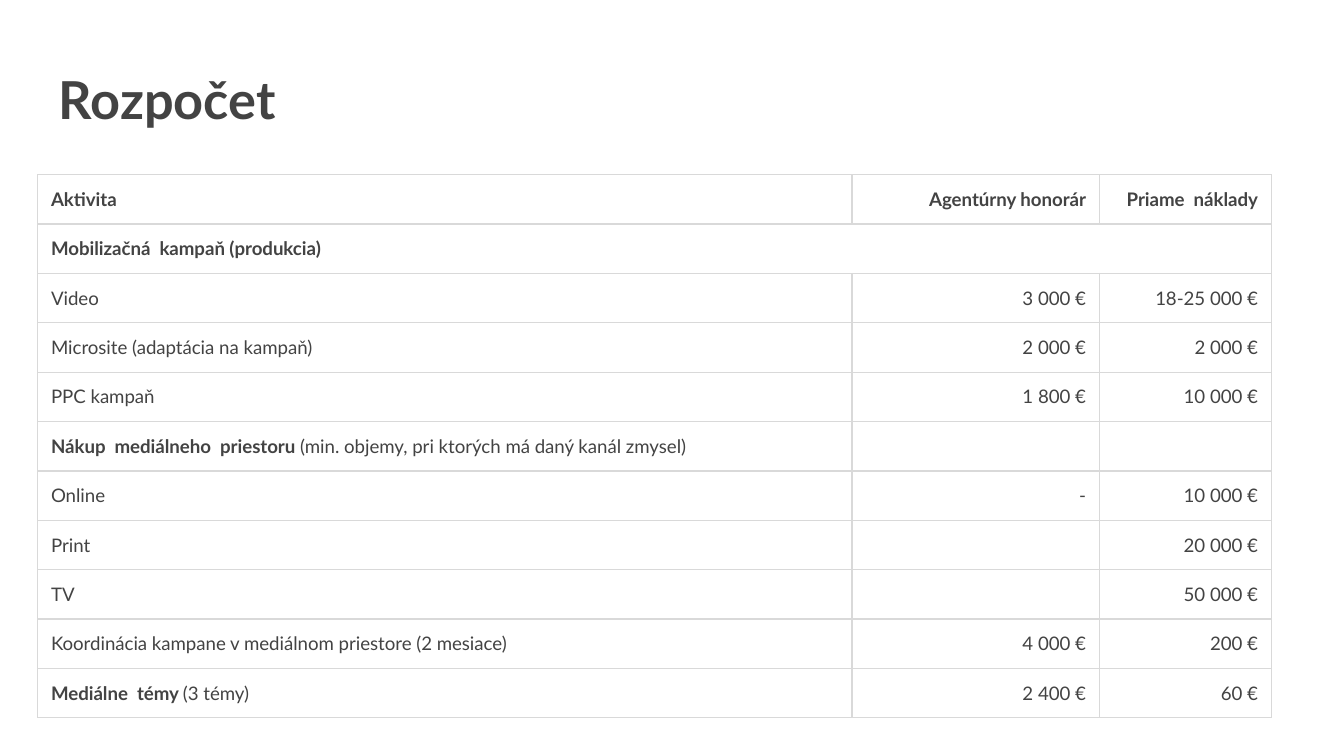
from dataclasses import dataclass

from lxml import etree
from pptx import Presentation
from pptx import util as u
from pptx.dml.color import RGBColor
from pptx.enum import text
from pptx.oxml import ns


@dataclass(frozen=True)
class Theme:
    font: str = "Lato"
    ink: str = "434343"
    rule: str = "D9D9D9"
    title: float = 28
    body: float = 10
    line: float = 0.75
    pad: float = 0.1


THEME = Theme()
WIDTH = 10
HEIGHT = WIDTH * 9 / 16
COLS = [6.06, 1.84, 1.28]
ROW = 0.36

# Each row: bold label, plain label, agency fee, direct costs
HEAD = ("Aktivita", "", "Agentúrny honorár", "Priame  náklady")
GROUP = "Mobilizačná  kampaň (produkcia)"
ROWS = [
    HEAD,
    (GROUP, "", "", ""),
    ("", "Video", "3 000 €", "18-25 000 €"),
    ("", "Microsite (adaptácia na kampaň)", "2 000 €", "2 000 €"),
    ("", "PPC kampaň", "1 800 €", "10 000 €"),
    ("Nákup  mediálneho  priestoru",
     " (min. objemy, pri ktorých má daný kanál zmysel)", "", ""),
    ("", "Online", "-", "10 000 €"),
    ("", "Print", "", "20 000 €"),
    ("", "TV", "", "50 000 €"),
    ("", "Koordinácia kampane v mediálnom priestore (2 mesiace)",
     "4 000 €", "200 €"),
    ("Mediálne  témy ", "(3 témy)", "2 400 €", "60 €"),
]


def add_run(para, words, size, bold):
    run = para.add_run()
    run.text = words
    font = run.font
    font.name, font.size, font.bold = THEME.font, u.Pt(size), bold
    font.color.rgb = RGBColor.from_string(THEME.ink)


def set_pad(box):
    pad = u.Inches(THEME.pad)
    box.margin_left = box.margin_right = pad
    box.margin_top = box.margin_bottom = pad


def add_rules(cell):
    """Draw a thin line on all four sides of the cell."""
    props = cell._tc.get_or_add_tcPr()
    for spot, side in enumerate(("lnL", "lnR", "lnT", "lnB")):
        line = etree.Element(ns.qn(f"a:{side}"), w=str(u.Pt(THEME.line)))
        fill = etree.SubElement(line, ns.qn("a:solidFill"))
        etree.SubElement(fill, ns.qn("a:srgbClr"), val=THEME.rule)
        props.insert(spot, line)


def fill_cell(cell, parts, align):
    """Write (words, bold) parts into a clear, ruled cell."""
    set_pad(cell)
    cell.fill.background()
    add_rules(cell)
    para = cell.text_frame.paragraphs[0]
    para.alignment = align
    for words, bold in parts:
        if words:
            add_run(para, words, THEME.body, bold)
    # The end mark sets the height of an empty cell
    end = para._p.get_or_add_endParaRPr()
    end.set("sz", str(int(THEME.body * 100)))


def add_title(slide, left, top, width, height):
    box = slide.shapes.add_textbox(*map(u.Inches, (left, top, width, height)))
    frame = box.text_frame
    frame.word_wrap = True
    set_pad(frame)
    add_run(frame.paragraphs[0], "Rozpočet", THEME.title, True)


def add_budget(slide, left, top):
    size = (left, top, sum(COLS), ROW * len(ROWS))
    frame = slide.shapes.add_table(len(ROWS), len(COLS), *map(u.Inches, size))
    table = frame.table
    table.first_row = table.horz_banding = False
    for col, width in zip(table.columns, COLS):
        col.width = u.Inches(width)
    for r, row in enumerate(ROWS):
        table.rows[r].height = u.Inches(ROW)
        strong, plain, *costs = row
        label = [(strong, True), (plain, False)]
        fill_cell(table.cell(r, 0), label, text.PP_ALIGN.LEFT)
        for c, cost in enumerate(costs, 1):
            fill_cell(table.cell(r, c), [(cost, row is HEAD)],
                      text.PP_ALIGN.RIGHT)
        if strong == GROUP:
            table.cell(r, 0).merge(table.cell(r, len(COLS) - 1))


def main():
    deck = Presentation()
    deck.slide_width, deck.slide_height = u.Inches(WIDTH), u.Inches(HEIGHT)
    slide = deck.slides.add_slide(deck.slide_layouts[6])
    add_title(slide, 0.34, 0.4, 9.32, 0.63)
    add_budget(slide, 0.28, 1.3)
    deck.save("out.pptx")


if __name__ == "__main__":
    main()
